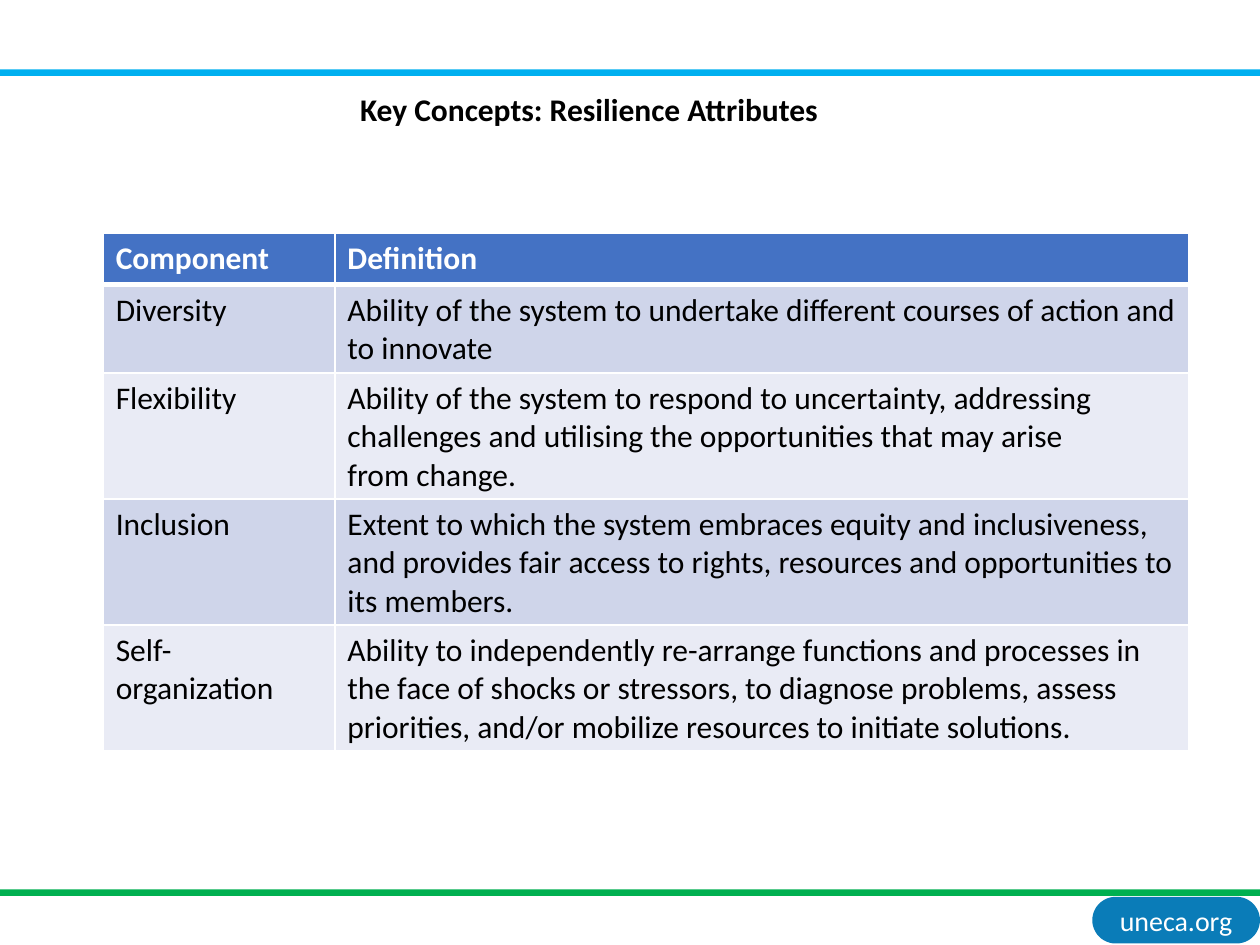
from dataclasses import dataclass

from lxml import etree
from pptx import Presentation
from pptx.dml.color import RGBColor
from pptx.enum.shapes import MSO_SHAPE
from pptx.enum.text import MSO_ANCHOR, PP_ALIGN
from pptx.oxml.ns import qn
from pptx.util import Cm, Pt

RECTANGLE = MSO_SHAPE.RECTANGLE
ROUNDED = MSO_SHAPE.ROUNDED_RECTANGLE
CENTER = PP_ALIGN.CENTER
MIDDLE = MSO_ANCHOR.MIDDLE


@dataclass(frozen=True)
class Theme:
    """Colours, font and type sizes of the deck."""
    font: str = "Calibri"
    body_size: int = 18
    badge_size: int = 16
    black: str = "000000"
    white: str = "FFFFFF"
    top_rule: str = "00B0F0"
    bottom_rule: str = "00B050"
    badge: str = "0A7CB8"
    header: str = "4472C4"
    bands: tuple = ("CFD5EA", "E9EBF5")


THEME = Theme()
ATTRIBUTES = [
    ("Component", "Definition"),
    ("Diversity", "Ability of the system to undertake different courses of action and to innovate"),
    ("Flexibility", "Ability of the system to respond to uncertainty, addressing challenges "
     "and utilising the opportunities that may arise\nfrom change."),
    ("Inclusion", "Extent to which the system embraces equity and inclusiveness, and provides "
     "fair access to rights, resources and opportunities to its members."),
    ("Self-organization", "Ability to independently re-arrange functions and processes in the "
     "face of shocks or stressors, to diagnose problems, assess priorities, and/or mobilize "
     "resources to initiate solutions."),
]
ROW_HEIGHTS = (1.04, 1.76, 2.54, 2.54, 2.54)
FIRST_COLUMN = 4.67


def write(frame, text, color, size=THEME.body_size, bold=False):
    """Put text in a frame and format every run."""
    frame.text = text
    for para in frame.paragraphs:
        for span in para.runs:
            span.font.name = THEME.font
            span.font.size = Pt(size)
            span.font.bold = bold
            span.font.color.rgb = RGBColor.from_string(color)


def add_block(page, kind, box, color):
    """Add a plain filled shape in a box given in centimetres."""
    block = page.shapes.add_shape(kind, *map(Cm, box))
    block.shadow.inherit = False
    block.fill.solid()
    block.fill.fore_color.rgb = RGBColor.from_string(color)
    block.line.fill.background()
    return block


def add_badge(page, box):
    """Add the rounded web address badge."""
    badge = add_block(page, ROUNDED, box, THEME.badge)
    badge.adjustments[0] = 0.5
    frame = badge.text_frame
    frame.margin_left = frame.margin_right = Cm(0.13)
    frame.margin_top = frame.margin_bottom = Cm(0.13)
    frame.vertical_anchor = MIDDLE
    write(frame, "uneca.org", THEME.white, THEME.badge_size)
    frame.paragraphs[0].alignment = CENTER


def add_title(page, box):
    """Add the bold slide title."""
    frame = page.shapes.add_textbox(*map(Cm, box)).text_frame
    frame.word_wrap = False
    write(frame, "Key Concepts: Resilience Attributes", THEME.black, bold=True)


def add_borders(cell, top, bottom):
    """Draw white borders, with top and bottom widths in points."""
    properties = cell._tc.get_or_add_tcPr()
    for side, width in (("L", 1), ("R", 1), ("T", top), ("B", bottom)):
        line = etree.SubElement(properties, qn(f"a:ln{side}"), w=str(Pt(width)))
        fill = etree.SubElement(line, qn("a:solidFill"))
        etree.SubElement(fill, qn("a:srgbClr"), val=THEME.white)


def add_attribute_table(page, box):
    """Add the table of resilience attributes."""
    table = page.shapes.add_table(len(ATTRIBUTES), 2, *map(Cm, box)).table
    table.columns[0].width = Cm(FIRST_COLUMN)
    table.columns[1].width = Cm(box[2] - FIRST_COLUMN)
    for index, texts in enumerate(ATTRIBUTES):
        table.rows[index].height = Cm(ROW_HEIGHTS[index])
        is_header = index == 0
        fill = THEME.header if is_header else THEME.bands[(index - 1) % 2]
        color = THEME.white if is_header else THEME.black
        for column, text in enumerate(texts):
            cell = table.cell(index, column)
            add_borders(cell, 3 if index == 1 else 1, 3 if is_header else 1)
            cell.fill.solid()
            cell.fill.fore_color.rgb = RGBColor.from_string(fill)
            write(cell.text_frame, text, color, bold=is_header)


def main():
    """Build the slide and save the deck."""
    deck = Presentation()
    deck.slide_width, deck.slide_height = Cm(25.4), Cm(19.05)
    page = deck.slides.add_slide(deck.slide_layouts[6])
    add_badge(page, (22.02, 18.08, 3.38, 0.94))
    add_block(page, RECTANGLE, (0, 1.4, 25.4, 0.13), THEME.top_rule)
    add_block(page, RECTANGLE, (0, 17.93, 25.4, 0.13), THEME.bottom_rule)
    add_title(page, (7.01, 1.7, 9.83, 1.02))
    add_attribute_table(page, (2.08, 4.7, 21.89, sum(ROW_HEIGHTS)))
    deck.save("out.pptx")


if __name__ == "__main__":
    main()
